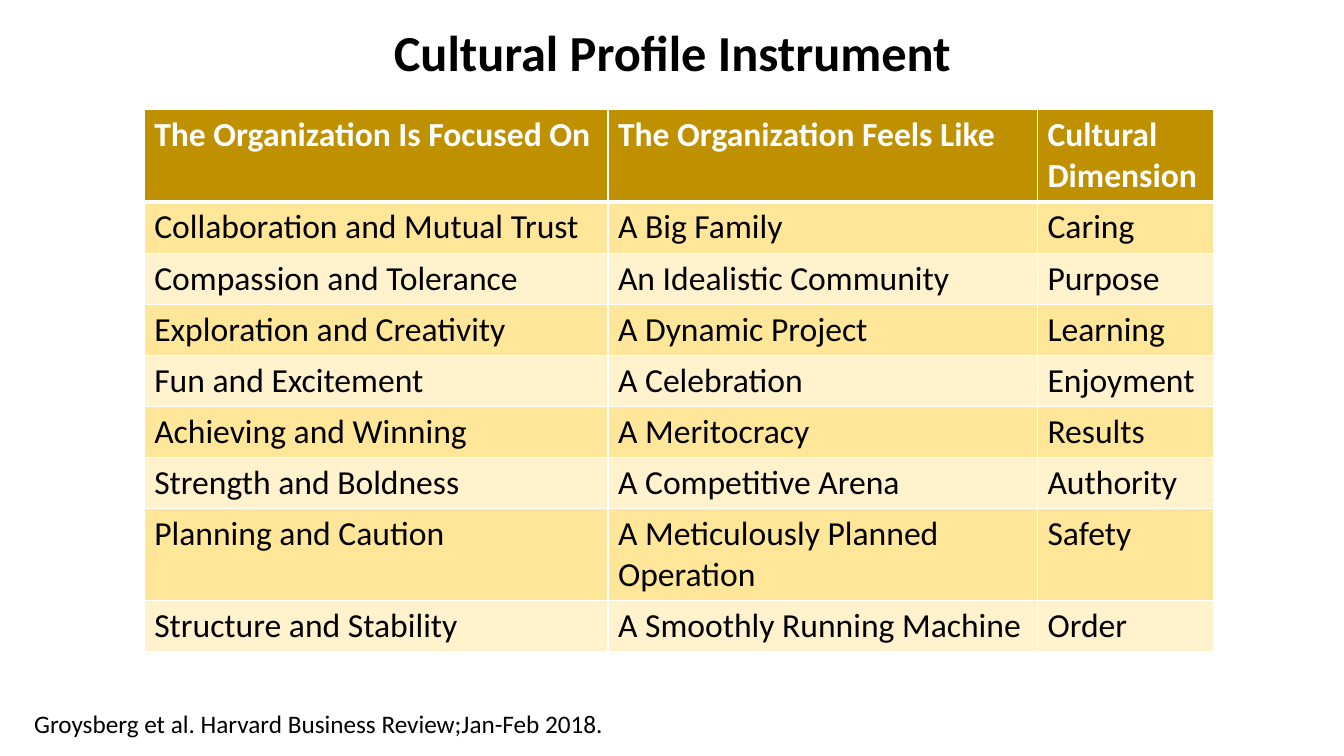
from typing import NamedTuple

from lxml.etree import SubElement
from pptx import Presentation
from pptx.dml.color import RGBColor
from pptx.enum.text import MSO_ANCHOR, MSO_AUTO_SIZE, PP_ALIGN
from pptx.oxml.ns import qn
from pptx.slide import Slide
from pptx.table import _Cell
from pptx.text.text import TextFrame
from pptx.util import Inches, Pt

BLACK = RGBColor(0x00, 0x00, 0x00)
WHITE = RGBColor(0xFF, 0xFF, 0xFF)
GOLD = RGBColor(0xBF, 0x90, 0x00)
AMBER = RGBColor(0xFF, 0xE6, 0x99)
CREAM = RGBColor(0xFF, 0xF2, 0xCC)


class Trait(NamedTuple):
    focus: str
    feel: str
    kind: str


HEAD = Trait("The Organization Is Focused On", "The Organization Feels Like", "Cultural Dimension")
TRAITS = [
    Trait("Collaboration and Mutual Trust", "A Big Family", "Caring"),
    Trait("Compassion and Tolerance", "An Idealistic Community", "Purpose"),
    Trait("Exploration and Creativity", "A Dynamic Project", "Learning"),
    Trait("Fun and Excitement", "A Celebration", "Enjoyment"),
    Trait("Achieving and Winning", "A Meritocracy", "Results"),
    Trait("Strength and Boldness", "A Competitive Arena", "Authority"),
    Trait("Planning and Caution", "A Meticulously Planned Operation", "Safety"),
    Trait("Structure and Stability", "A Smoothly Running Machine", "Order"),
]
WIDTHS = [4.6, 4.26, 1.75]
ROW = 0.41


def write(frame: TextFrame, text: str, *, size: float, color: RGBColor = BLACK,
          bold: bool = False, align: PP_ALIGN = PP_ALIGN.LEFT, space: float = 1.0) -> None:
    frame.text = text
    para = frame.paragraphs[0]
    para.alignment = align
    para.line_spacing = space
    font = para.runs[0].font
    font.name = "Calibri"
    font.size = Pt(size)
    font.bold = bold
    font.color.rgb = color


def edge(cell: _Cell, top: float, base: float) -> None:
    props = cell._tc.get_or_add_tcPr()
    for side, width in (("L", 1), ("R", 1), ("T", top), ("B", base)):
        line = SubElement(props, qn(f"a:ln{side}"), w=str(Pt(width)))
        fill = SubElement(line, qn("a:solidFill"))
        SubElement(fill, qn("a:srgbClr"), val=str(WHITE))


def add_grid(slide: Slide) -> None:
    rows = [HEAD, *TRAITS]
    table = slide.shapes.add_table(
        len(rows), len(WIDTHS), Inches(1.43), Inches(1.09),
        Inches(sum(WIDTHS)), Inches(ROW * len(rows))).table
    for column, width in zip(table.columns, WIDTHS):
        column.width = Inches(width)
    for r, trait in enumerate(rows):
        table.rows[r].height = Inches(ROW)
        head = r == 0
        fill = GOLD if head else AMBER if r % 2 else CREAM
        for c, text in enumerate(trait):
            cell = table.cell(r, c)
            write(cell.text_frame, text, size=24, bold=head, color=WHITE if head else BLACK)
            edge(cell, top=3 if r == 1 else 1, base=3 if head else 1)
            cell.fill.solid()
            cell.fill.fore_color.rgb = fill


def add_title(slide: Slide) -> None:
    title = slide.shapes.title
    title.left, title.top = Inches(0.92), Inches(0.2)
    title.width, title.height = Inches(11.5), Inches(0.69)
    frame = title.text_frame
    frame.vertical_anchor = MSO_ANCHOR.MIDDLE
    frame.auto_size = MSO_AUTO_SIZE.NONE
    write(frame, "Cultural Profile Instrument", size=36, bold=True,
          align=PP_ALIGN.CENTER, space=0.9)


def add_cite(slide: Slide) -> None:
    box = slide.shapes.add_textbox(Inches(0.24), Inches(6.98), Inches(5.91), Inches(0.4))
    frame = box.text_frame
    frame.word_wrap = False
    frame.auto_size = MSO_AUTO_SIZE.SHAPE_TO_FIT_TEXT
    write(frame, "Groysberg et al. Harvard Business Review;Jan-Feb 2018.", size=18)


def main() -> None:
    deck = Presentation()
    deck.slide_width, deck.slide_height = Inches(13.33), Inches(7.5)
    slide = deck.slides.add_slide(deck.slide_layouts[5])
    add_title(slide)
    add_grid(slide)
    add_cite(slide)
    deck.save("out.pptx")


if __name__ == "__main__":
    main()
